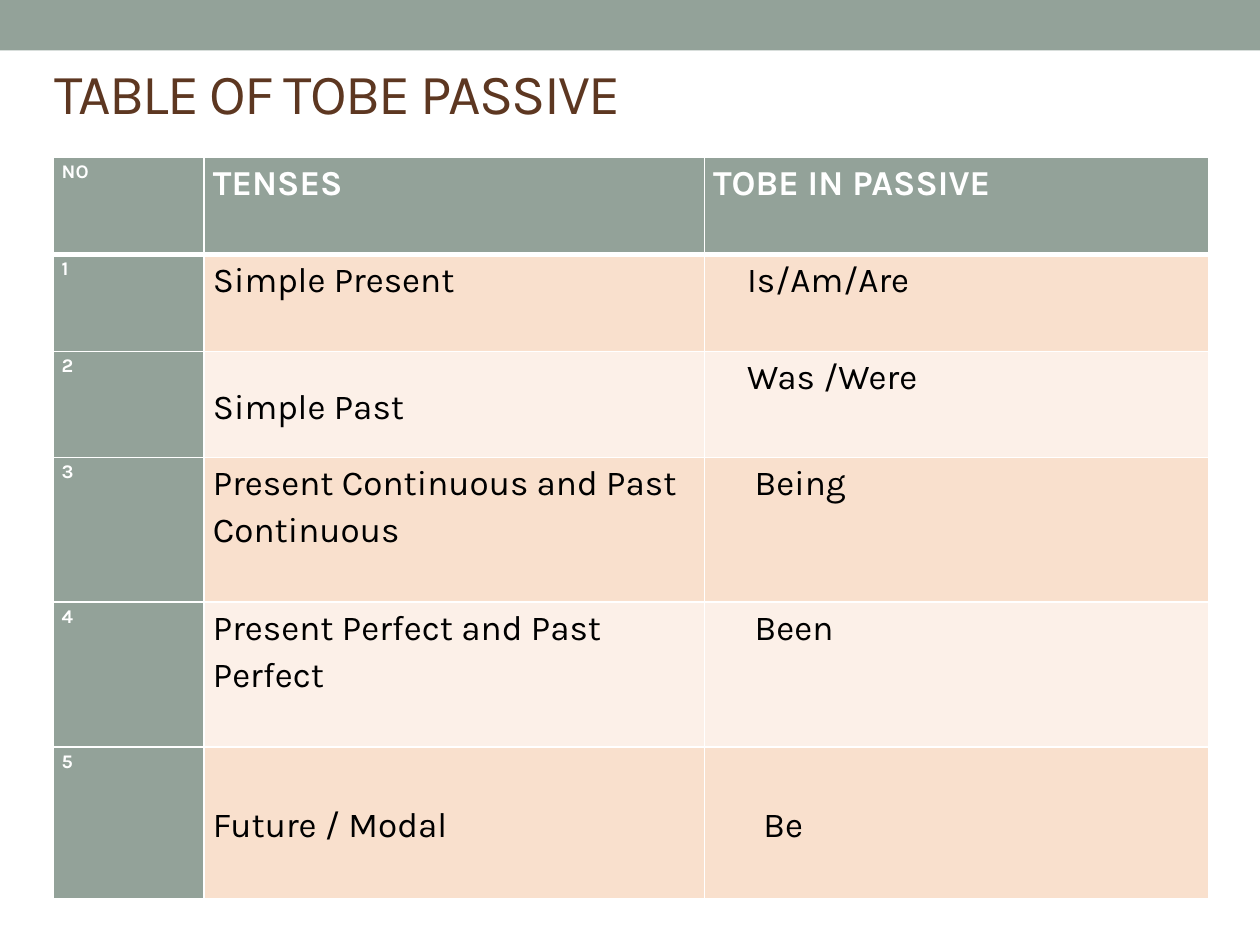
from lxml.etree import SubElement
from pptx import Presentation
from pptx.dml.color import RGBColor
from pptx.enum.shapes import MSO_SHAPE as Shape
from pptx.enum.text import MSO_ANCHOR as Anchor, MSO_AUTO_SIZE as AutoSize, PP_ALIGN as Align
from pptx.oxml.ns import qn
from pptx.util import Inches, Pt

SAGE = RGBColor(0x93, 0xA2, 0x99)
BROWN = RGBColor(0x5D, 0x37, 0x21)
PEACH = RGBColor(0xF9, 0xE0, 0xCD)
CREAM = RGBColor(0xFC, 0xF0, 0xE8)
WHITE = RGBColor(0xFF, 0xFF, 0xFF)
BLACK = RGBColor(0, 0, 0)
FONT = "Karla"
SLIDE_WIDTH, SLIDE_HEIGHT = 10, 7.5
COLUMNS = [1.2, 3.97, 4]
ROWS = [0.77, 0.77, 0.84, 1.15, 1.15, 1.2]
HEADINGS = ["NO", "TENSES", "TOBE IN PASSIVE"]
TENSES = [
    ("Simple Present", "Is/Am/Are", 0.27, Anchor.TOP, Anchor.TOP),
    ("Simple Past", "Was /Were", 0.27, Anchor.MIDDLE, Anchor.TOP),
    ("Present Continuous and Past Continuous", "Being", 0.33, Anchor.TOP, Anchor.TOP),
    ("Present Perfect and Past Perfect", "Been", 0.33, Anchor.TOP, Anchor.TOP),
    ("Future / Modal", "Be", 0.4, Anchor.MIDDLE, Anchor.MIDDLE),
]


def style_run(run, size, color, bold=False):
    run.font.name = FONT
    run.font.size = Pt(size)
    run.font.bold = bold
    run.font.color.rgb = color


def add_band(slide):
    band = slide.shapes.add_shape(Shape.RECTANGLE, 0, 0, Inches(SLIDE_WIDTH), Inches(0.4))
    band.shadow.inherit = False
    band.fill.solid()
    band.fill.fore_color.rgb = SAGE
    band.line.fill.background()


def set_title(slide, wording):
    title = slide.shapes.title
    title.left, title.top = Inches(0.33), Inches(0.46)
    title.width, title.height = Inches(9.5), Inches(0.92)
    frame = title.text_frame
    frame.text = wording
    frame.auto_size = AutoSize.NONE
    frame.word_wrap = True
    frame.vertical_anchor = Anchor.TOP
    frame.margin_top = 0
    heading = frame.paragraphs[0]
    heading.alignment = Align.LEFT
    style_run(heading.runs[0], 32.4, BROWN)
    heading.runs[0].font._element.set("spc", "-100")


def set_borders(cell, top, bottom):
    properties = cell._tc.get_or_add_tcPr()
    for side, points in zip("LRTB", (1, 1, top, bottom)):
        border = SubElement(properties, qn(f"a:ln{side}"), w=str(Pt(points)))
        fill = SubElement(border, qn("a:solidFill"))
        SubElement(fill, qn("a:srgbClr"), val=str(WHITE))


def fill_cell(cell, wording, size, color, bold, background, row, indent=0, anchor=Anchor.TOP):
    set_borders(cell, 3 if row == 1 else 1, 3 if row == 0 else 1)
    cell.fill.solid()
    cell.fill.fore_color.rgb = background
    cell.margin_left = Inches(0.07 + indent)
    cell.margin_right = Inches(0.07)
    cell.margin_top = cell.margin_bottom = 0
    cell.vertical_anchor = anchor
    cell.text_frame.text = wording
    paragraph = cell.text_frame.paragraphs[0]
    paragraph.line_spacing = 1.15
    style_run(paragraph.runs[0], size, color, bold)


def add_tense_table(slide):
    table = slide.shapes.add_table(
        len(ROWS), len(COLUMNS), Inches(0.42), Inches(1.25),
        Inches(sum(COLUMNS)), Inches(sum(ROWS))).table
    for column, width in zip(table.columns, COLUMNS):
        column.width = Inches(width)
    for row, height in zip(table.rows, ROWS):
        row.height = Inches(height)
    for column, heading in enumerate(HEADINGS):
        fill_cell(table.cell(0, column), heading, 20 if column else 11, WHITE, True, SAGE, 0)
    for row, (tense, passive, indent, tense_anchor, passive_anchor) in enumerate(TENSES, 1):
        shade = PEACH if row % 2 else CREAM
        fill_cell(table.cell(row, 0), str(row), 11, WHITE, True, SAGE, row)
        fill_cell(table.cell(row, 1), tense, 20, BLACK, False, shade, row, anchor=tense_anchor)
        fill_cell(table.cell(row, 2), passive, 20, BLACK, False, shade, row, indent, passive_anchor)


def main():
    deck = Presentation()
    deck.slide_width, deck.slide_height = Inches(SLIDE_WIDTH), Inches(SLIDE_HEIGHT)
    slide = deck.slides.add_slide(deck.slide_layouts[5])
    add_band(slide)
    set_title(slide, "TABLE OF TOBE PASSIVE")
    add_tense_table(slide)
    deck.save("out.pptx")


if __name__ == "__main__":
    main()
